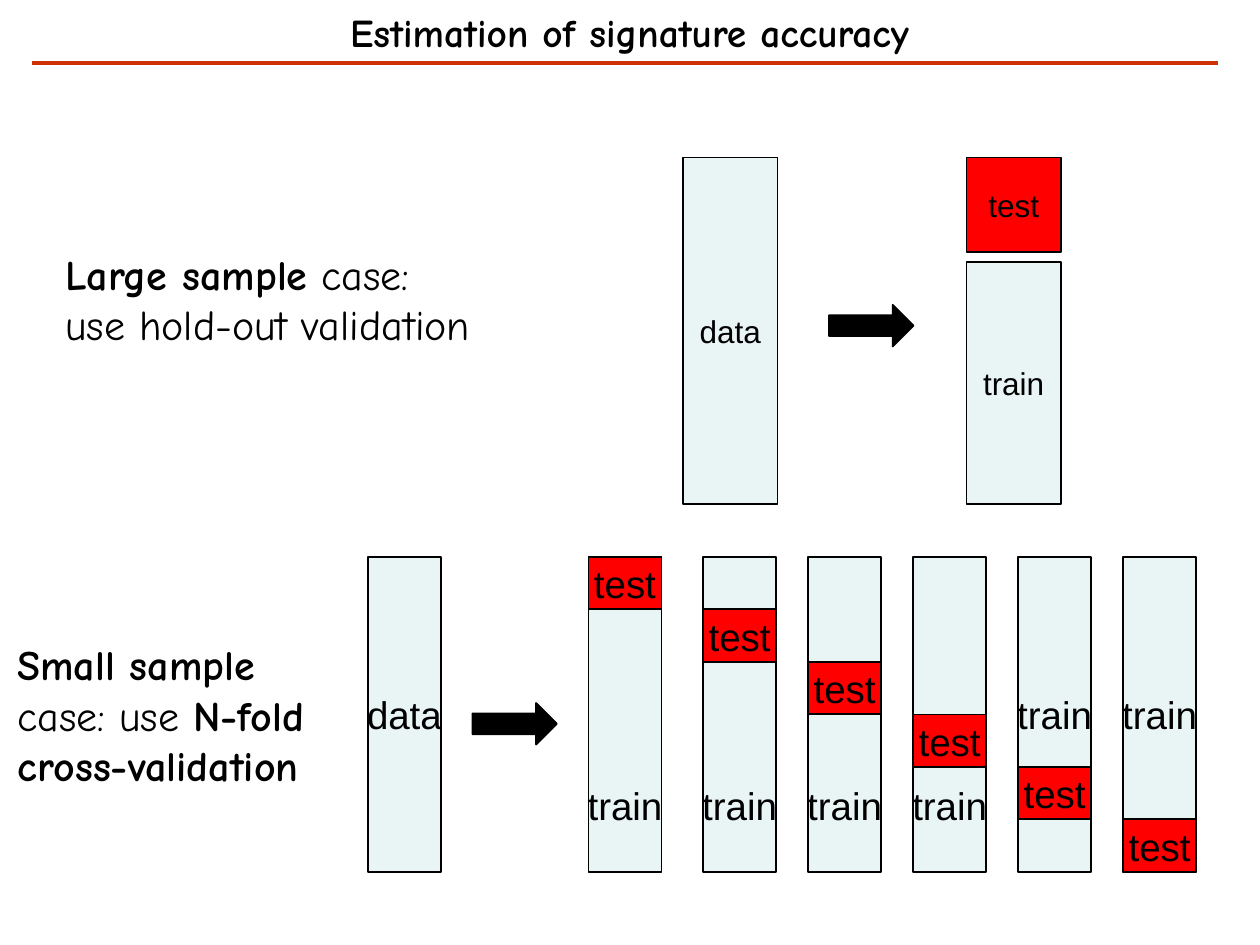
from lxml import etree
from pptx import Presentation
from pptx.dml.color import RGBColor
from pptx.enum.shapes import MSO_CONNECTOR as Connector, MSO_SHAPE as Shape
from pptx.enum.text import MSO_ANCHOR as Anchor, MSO_AUTO_SIZE as AutoSize, PP_ALIGN as Align
from pptx.oxml.ns import qn
from pptx.util import Inches, Pt

# Content: (text, bold) runs inside paragraphs
TITLE = [[("Estimation of signature accuracy", True)]]
LARGE_CASE = [[("Large sample", True), (" case:", False)],
              [("use hold-out validation", False)]]
SMALL_CASE = [[("Small sample ", True), ("case: use ", False),
               ("N-fold cross-validation", True)]]
DATA, TRAIN, TEST = "data", "train", "test"
FOLD_LEFTS = [4.67] + [5.58 + i * 2.5 / 3 for i in range(5)]
LOW_LABEL_FOLDS = 4     # the first folds carry "train" below the test block

THEME = {
    "ink": RGBColor(0x00, 0x00, 0x00),
    "rule": RGBColor(0xCC, 0x33, 0x00),
    TEST: RGBColor(0xFF, 0x00, 0x00),
    TRAIN: RGBColor(0xE9, 0xF4, 0xF5),
    DATA: RGBColor(0xE9, 0xF4, 0xF5),
    "prose_font": "Comic Neue", "label_font": "Arial",
    "title_size": 22.5, "prose_size": 24, "hold_out_size": 18, "fold_size": 22,
}

prs = Presentation()
prs.slide_width, prs.slide_height = Inches(10), Inches(7.5)
slide = prs.slides.add_slide(prs.slide_layouts[6])


def style_run(run, font, size, bold=False):
    run.font.name, run.font.size, run.font.bold = font, Pt(size), bold
    run.font.color.rgb = THEME["ink"]


def add_prose(paragraphs, box, size, align=Align.LEFT):
    frame = slide.shapes.add_textbox(*map(Inches, box)).text_frame
    frame.word_wrap = True
    for i, runs in enumerate(paragraphs):
        paragraph = frame.paragraphs[0] if i == 0 else frame.add_paragraph()
        paragraph.alignment = align
        for words, bold in runs:
            run = paragraph.add_run()
            run.text = words
            style_run(run, THEME["prose_font"], size, bold)
    return frame


def add_solid(kind, box, fill):
    solid = slide.shapes.add_shape(kind, *map(Inches, box))
    solid.shadow.inherit = False
    solid.fill.solid()
    solid.fill.fore_color.rgb = fill
    solid.line.color.rgb = THEME["ink"]
    solid.line.width = Pt(1)
    return solid


def add_block(label, box, size, label_drop=0):
    frame = add_solid(Shape.RECTANGLE, box, THEME[label]).text_frame
    frame.word_wrap = False
    frame.vertical_anchor = Anchor.MIDDLE
    frame.margin_top = Inches(0.05 + 2 * label_drop)
    frame.text = label
    frame.paragraphs[0].alignment = Align.CENTER
    style_run(frame.paragraphs[0].runs[0], THEME["label_font"], size)


def add_arrow(left, top):
    add_solid(Shape.RIGHT_ARROW, (left, top, 0.67, 0.33), THEME["ink"])


# Title and rule
title = add_prose(TITLE, (0, 0, 10, 0.5), THEME["title_size"], Align.CENTER)
title.vertical_anchor = Anchor.MIDDLE
rule = slide.shapes.add_connector(Connector.STRAIGHT, Inches(0.25), Inches(0.5),
                                  Inches(9.67), Inches(0.5))
rule.line.color.rgb = THEME["rule"]
rule.line.width = Pt(2.5)
etree.SubElement(rule.element.spPr, qn("a:effectLst"))

# Large sample: hold-out validation
large = add_prose(LARGE_CASE, (0.42, 1.92, 4.05, 0.91), THEME["prose_size"])
large.auto_size = AutoSize.SHAPE_TO_FIT_TEXT
for label, left, top, height in [(DATA, 5.42, 1.25, 2.75),
                                 (TEST, 7.67, 1.25, 0.75),
                                 (TRAIN, 7.67, 2.08, 1.92)]:
    add_block(label, (left, top, 0.75, height), THEME["hold_out_size"])
add_arrow(6.58, 2.42)

# Small sample: N-fold cross-validation
small = add_prose(SMALL_CASE, (0.04, 5.02, 2.88, 1.31), THEME["prose_size"])
small.auto_size = AutoSize.SHAPE_TO_FIT_TEXT
small.margin_right = Inches(0.2)
fold_top, fold_width, fold_height = 4.42, 0.58, 2.5
test_height = fold_height / len(FOLD_LEFTS)
add_block(DATA, (2.92, fold_top, fold_width, fold_height), THEME["fold_size"])
add_arrow(3.75, 5.58)
for fold, left in enumerate(FOLD_LEFTS):
    add_block(TRAIN, (left, fold_top, fold_width, fold_height), THEME["fold_size"],
              label_drop=0.72 if fold < LOW_LABEL_FOLDS else 0)
    add_block(TEST, (left, fold_top + fold * test_height, fold_width, test_height),
              THEME["fold_size"])

prs.save("out.pptx")
